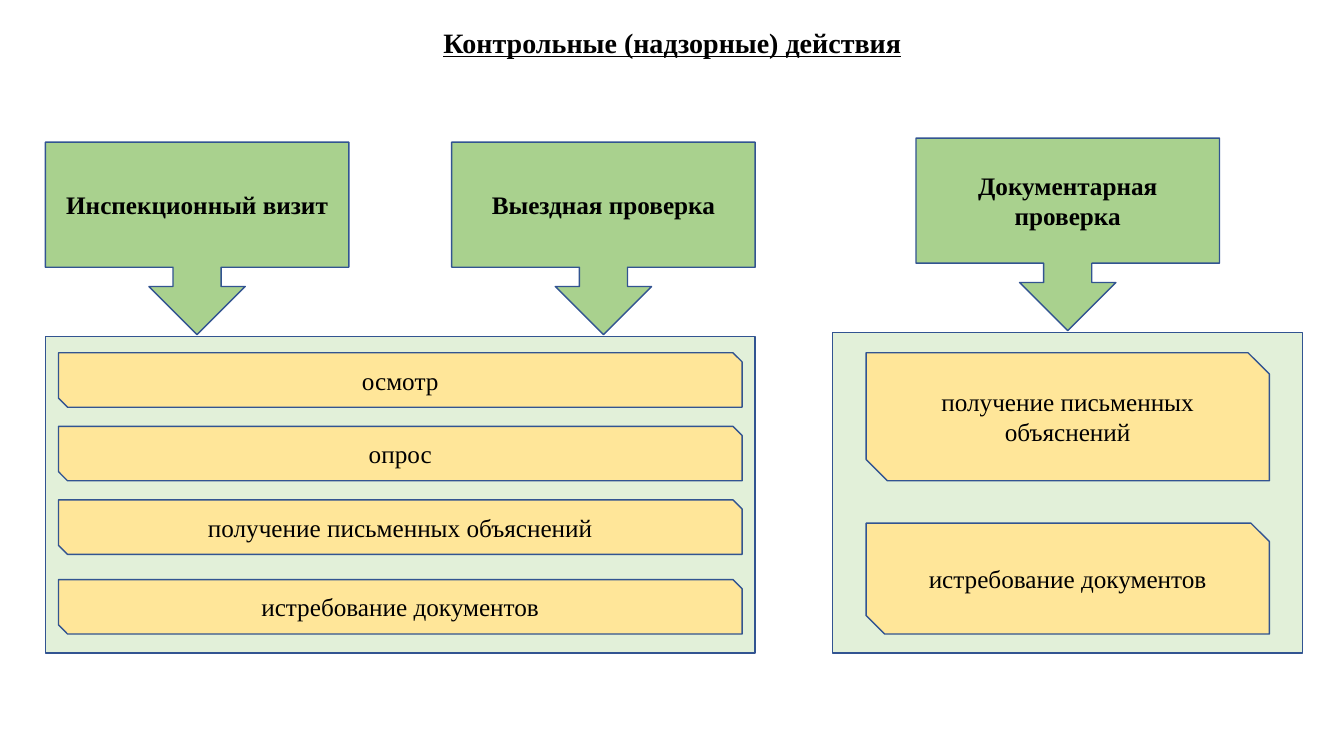
import pptx
import pptx.dml.color
import pptx.enum.shapes
import pptx.enum.text
import pptx.util

Inches = pptx.util.Inches
Pt = pptx.util.Pt
SHAPES = pptx.enum.shapes.MSO_SHAPE
ANCHORS = pptx.enum.text.MSO_ANCHOR

FONT = "Times New Roman"
BLACK = "000000"
OUTLINE = "325491"
PANEL_FILL = "E2F0D9"
HEADING_FILL = "A9D18E"
ACTION_FILL = "FFE699"

HEADING_WIDTH = 3.01
HEADING_HEIGHT = 1.91
PANEL_OFFSET = 1.93


def color(value):
    return pptx.dml.color.RGBColor.from_string(value)


def write_text(shape, text, size=18, bold=False, underline=False, anchor=ANCHORS.MIDDLE):
    frame = shape.text_frame
    frame.text = text
    frame.word_wrap = True
    frame.auto_size = pptx.enum.text.MSO_AUTO_SIZE.NONE
    frame.vertical_anchor = anchor
    para = frame.paragraphs[0]
    para.alignment = pptx.enum.text.PP_ALIGN.CENTER
    para.line_spacing = 1.0
    font = para.runs[0].font
    font.name = FONT
    font.size = Pt(size)
    font.bold = bold
    font.underline = underline
    font.color.rgb = color(BLACK)


def add_block(page, kind, box, fill, text=None, bold=False):
    shape = page.shapes.add_shape(kind, *map(Inches, box))
    shape.shadow.inherit = False
    shape.fill.solid()
    shape.fill.fore_color.rgb = color(fill)
    shape.line.color.rgb = color(OUTLINE)
    shape.line.width = Pt(1)
    if text:
        write_text(shape, text, bold=bold)


def add_title(page, box, text):
    title = page.shapes.title
    title.left, title.top, title.width, title.height = map(Inches, box)
    write_text(title, text, size=20, bold=True, underline=True, anchor=ANCHORS.TOP)


def add_inspection_group(page, box, headings, actions, inset):
    left, top, width, height = box
    panel_top = top + PANEL_OFFSET
    add_block(page, SHAPES.RECTANGLE,
              (left, panel_top, width, height - PANEL_OFFSET), PANEL_FILL)

    gap = (width - len(headings) * HEADING_WIDTH) / max(len(headings) - 1, 1)
    start = left if len(headings) > 1 else left + gap / 2
    for index, heading in enumerate(headings):
        heading_left = start + index * (HEADING_WIDTH + gap)
        add_block(page, SHAPES.DOWN_ARROW_CALLOUT,
                  (heading_left, top, HEADING_WIDTH, HEADING_HEIGHT),
                  HEADING_FILL, heading, bold=True)

    for action, offset, action_height in actions:
        add_block(page, SHAPES.SNIP_2_DIAG_RECTANGLE,
                  (left + inset, panel_top + offset, width - 2 * inset, action_height),
                  ACTION_FILL, action)


def main():
    deck = pptx.Presentation()
    deck.slide_width = Inches(13.33)
    deck.slide_height = Inches(7.5)
    page = deck.slides.add_slide(deck.slide_layouts.get_by_name("Title Only"))

    add_title(page, (0.38, 0.2, 12.58, 1.04), "Контрольные (надзорные) действия")
    add_inspection_group(
        page, (0.45, 1.41, 7.04, 5.07),
        ["Инспекционный визит", "Выездная проверка"],
        [("осмотр", 0.16, 0.54),
         ("опрос", 0.89, 0.54),
         ("получение письменных объяснений", 1.62, 0.54),
         ("истребование документов", 2.41, 0.54)],
        inset=0.13)
    add_inspection_group(
        page, (8.26, 1.37, 4.66, 5.11),
        ["Документарная проверка"],
        [("получение письменных объяснений", 0.2, 1.27),
         ("истребование документов", 1.89, 1.1)],
        inset=0.33)

    deck.save("out.pptx")


if __name__ == "__main__":
    main()
